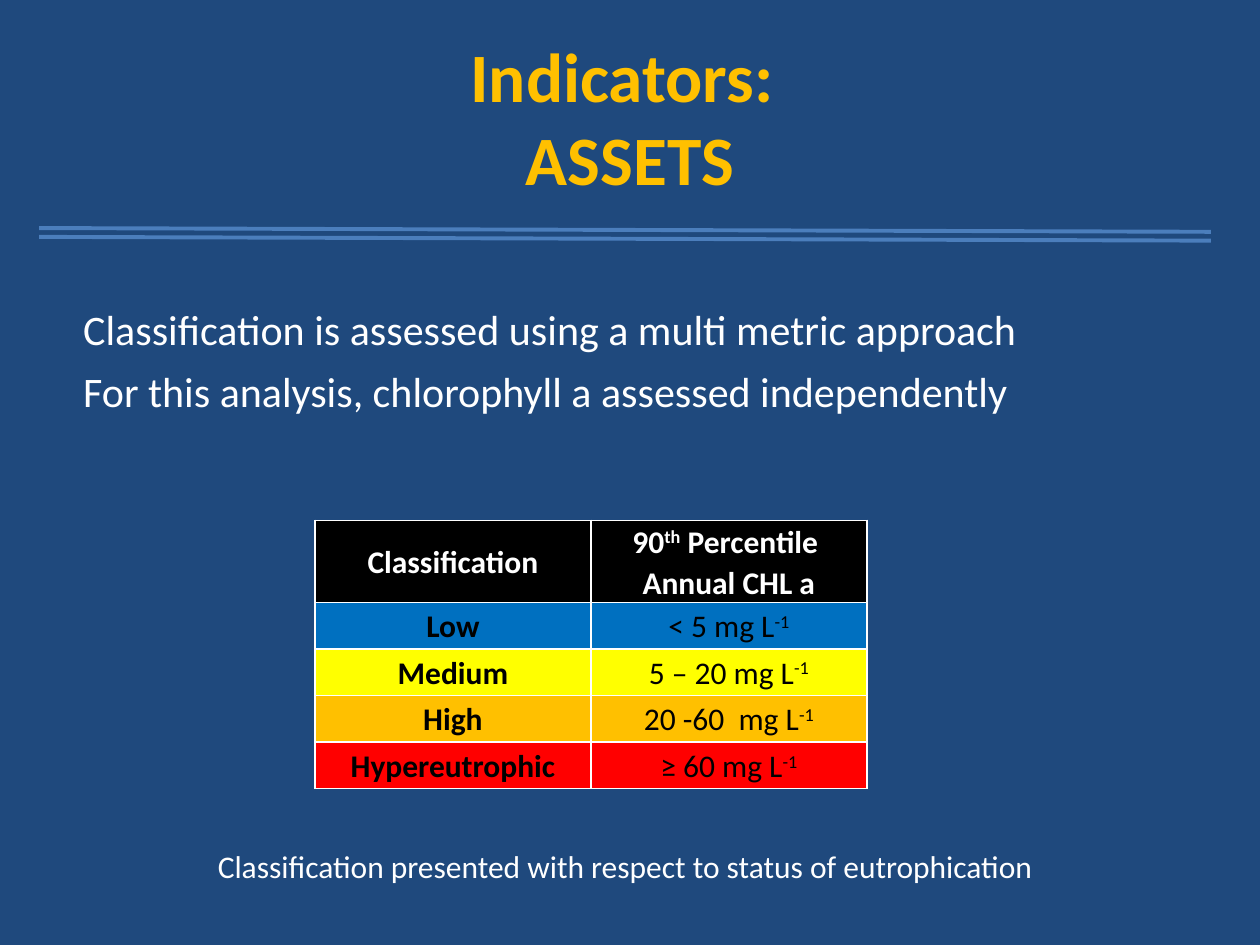
import pptx
import pptx.dml.color
import pptx.enum.shapes
import pptx.enum.text
import pptx.oxml.ns
import pptx.util
from lxml import etree

RGBColor = pptx.dml.color.RGBColor
Inches = pptx.util.Inches
Pt = pptx.util.Pt
CENTER = pptx.enum.text.PP_ALIGN.CENTER
MIDDLE = pptx.enum.text.MSO_ANCHOR.MIDDLE
qn = pptx.oxml.ns.qn

NAVY = RGBColor(0x1F, 0x49, 0x7D)
GOLD = RGBColor(0xFF, 0xC0, 0x00)
RULE_BLUE = RGBColor(0x4B, 0x7E, 0xBC)
WHITE = RGBColor(0xFF, 0xFF, 0xFF)
BLACK = RGBColor(0x00, 0x00, 0x00)
BLUE = RGBColor(0x00, 0x70, 0xC0)
YELLOW = RGBColor(0xFF, 0xFF, 0x00)
RED = RGBColor(0xFF, 0x00, 0x00)

TITLE = "Indicators: \vASSETS"
STATEMENTS = [
    "Classification is assessed using a multi metric approach",
    "For this analysis, chlorophyll a assessed independently",
]
HEADER = ([["Classification"]], [["90", "th", " Percentile "], ["Annual CHL a"]])
CLASSES = [
    ("Low", "< 5 mg L", BLUE),
    ("Medium", "5 – 20 mg L", YELLOW),
    ("High", "20 -60  mg L", GOLD),
    ("Hypereutrophic", "≥ 60 mg L", RED),
]
CAPTION = "Classification presented with respect to status of eutrophication"

COLUMN_WIDTH = 2.19
HEADER_HEIGHT, ROW_HEIGHT = 0.65, 0.37
RULE_TOP, RULE_GAP, RULE_DROP = 1.81, 0.07, 0.03


def apply(target, values):
    for name, value in values.items():
        setattr(target, name, value)


def box(left, top, width, height):
    return dict(left=Inches(left), top=Inches(top), width=Inches(width), height=Inches(height))


def style_font(font, size, color, bold=False):
    apply(font, dict(name="Calibri", size=Pt(size), bold=bold))
    font.color.rgb = color


def add_title(slide):
    title = slide.shapes.title
    apply(title, box(0.5, 0.3, 9, 1.25))
    apply(title.text_frame, dict(text=TITLE, word_wrap=True, vertical_anchor=MIDDLE))
    paragraph = title.text_frame.paragraphs[0]
    paragraph.alignment = CENTER
    for run in paragraph.runs:
        style_font(run.font, 39.6, GOLD, True)
    for line_break in paragraph._p.findall(qn("a:br")):
        etree.SubElement(line_break, qn("a:rPr"), sz="3960", b="1")


def add_text(slide, place, lines, size, frame_format, paragraph_format):
    frame = slide.shapes.add_textbox(**place).text_frame
    frame.text = "\n".join(lines)
    apply(frame, frame_format)
    for paragraph in frame.paragraphs:
        apply(paragraph, paragraph_format)
        style_font(paragraph.runs[0].font, size, WHITE)


def add_rule(slide, top):
    rule = slide.shapes.add_connector(
        pptx.enum.shapes.MSO_CONNECTOR.STRAIGHT,
        Inches(0.31), Inches(top), Inches(9.61), Inches(top + RULE_DROP))
    rule.line.color.rgb = RULE_BLUE
    rule.line.width = Pt(2.25)
    etree.SubElement(rule._element.spPr, qn("a:effectLst"))


def add_borders(cell):
    properties = cell._tc.get_or_add_tcPr()
    for side in ("lnL", "lnR", "lnT", "lnB"):
        border = etree.SubElement(properties, qn("a:" + side), w=str(Pt(1)))
        fill = etree.SubElement(border, qn("a:solidFill"))
        etree.SubElement(fill, qn("a:srgbClr"), val=str(WHITE))


def fill_cell(cell, lines, fill, color, bold):
    apply(cell, dict(margin_left=Inches(0.06), margin_right=Inches(0.06),
                     margin_top=0, margin_bottom=0, vertical_anchor=MIDDLE))
    add_borders(cell)
    cell.fill.solid()
    cell.fill.fore_color.rgb = fill
    frame = cell.text_frame
    for index, pieces in enumerate(lines):
        paragraph = frame.add_paragraph() if index else frame.paragraphs[0]
        apply(paragraph, dict(alignment=CENTER, line_spacing=1.07))
        for position, piece in enumerate(pieces):
            run = paragraph.add_run()
            run.text = piece
            style_font(run.font, 18, color, bold)
            if position == 1:
                run._r.get_or_add_rPr().set("baseline", "30000")


def add_class_table(slide):
    height = HEADER_HEIGHT + ROW_HEIGHT * len(CLASSES)
    table = slide.shapes.add_table(
        len(CLASSES) + 1, 2, **box(2.5, 4.13, 2 * COLUMN_WIDTH, height)).table
    for column in table.columns:
        column.width = Inches(COLUMN_WIDTH)
    for index, row in enumerate(table.rows):
        row.height = Inches(ROW_HEIGHT if index else HEADER_HEIGHT)
    for column, lines in enumerate(HEADER):
        fill_cell(table.cell(0, column), lines, BLACK, WHITE, True)
    for row, (name, limit, fill) in enumerate(CLASSES, 1):
        fill_cell(table.cell(row, 0), [[name]], fill, BLACK, True)
        fill_cell(table.cell(row, 1), [[limit, "-1"]], fill, BLACK, False)


def main():
    presentation = pptx.Presentation()
    apply(presentation, dict(slide_width=Inches(10), slide_height=Inches(7.5)))
    slide = presentation.slides.add_slide(presentation.slide_layouts[5])
    slide.background.fill.solid()
    slide.background.fill.fore_color.rgb = NAVY

    add_title(slide)
    add_text(slide, box(0.59, 2.41, 8.62, 1.69), STATEMENTS, 24,
             dict(word_wrap=True, margin_left=Inches(0.07), margin_right=Inches(0.07),
                  margin_top=Inches(0.04), margin_bottom=Inches(0.04)),
             dict(line_spacing=0.9, space_before=Pt(10)))
    add_class_table(slide)
    for index in range(2):
        add_rule(slide, RULE_TOP + index * RULE_GAP)
    add_text(slide, box(1.63, 6.67, 6.75, 0.4), [CAPTION], 18,
             dict(word_wrap=False, auto_size=pptx.enum.text.MSO_AUTO_SIZE.SHAPE_TO_FIT_TEXT),
             {})
    presentation.save("out.pptx")


if __name__ == "__main__":
    main()
